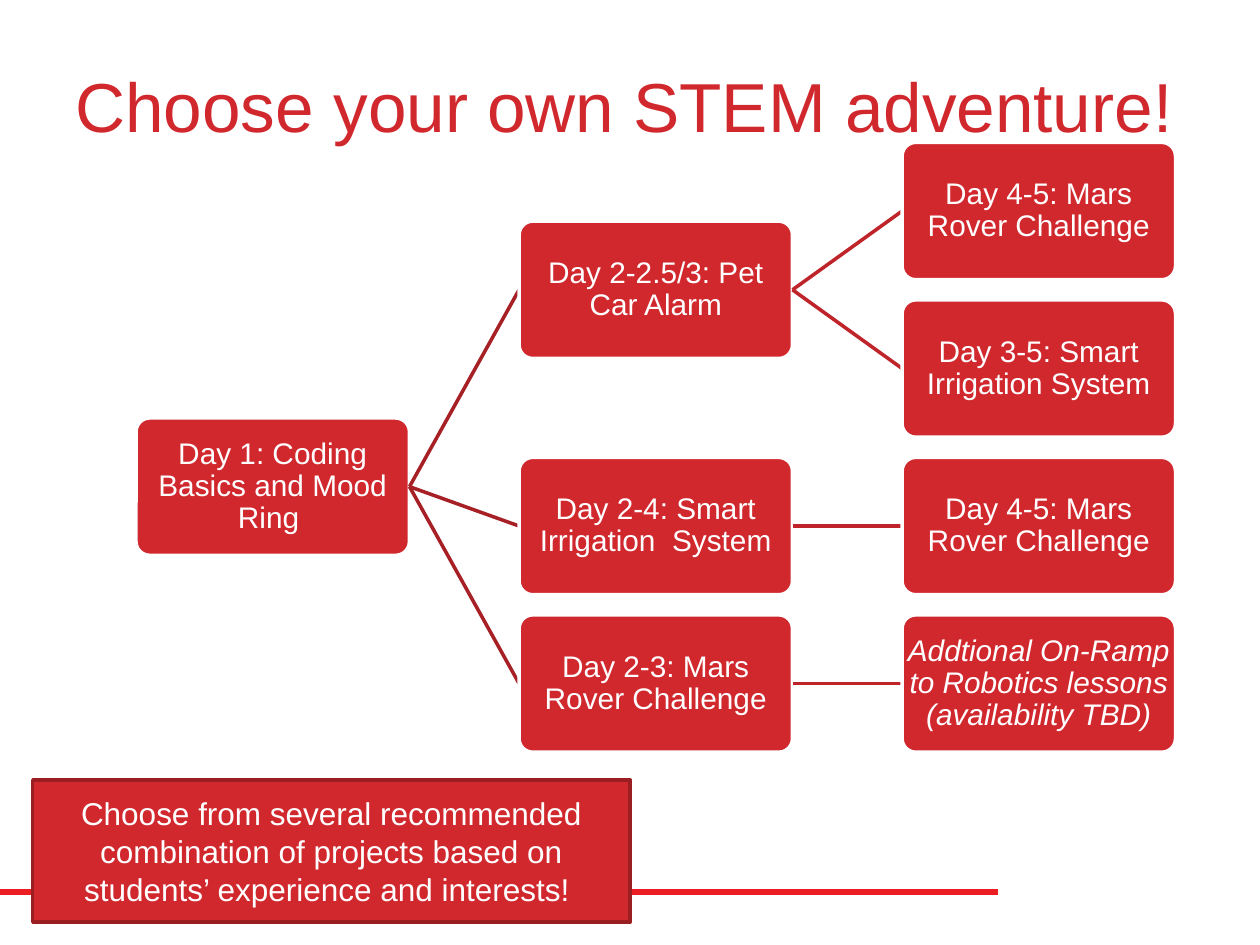
import pptx
import pptx.dml.color
import pptx.enum.shapes
import pptx.enum.text
import pptx.oxml.ns
import pptx.util
from lxml import etree

Inches = pptx.util.Inches
Pt = pptx.util.Pt
SHAPE = pptx.enum.shapes.MSO_SHAPE
ALIGN = pptx.enum.text.PP_ALIGN

TITLE = "Choose your own STEM adventure!"
ADVICE = (
    "Choose from several recommended combination of projects "
    "based on students’ experience and interests! "
)
PLAN = ("Day 1: Coding Basics and Mood Ring ", [
    ("Day 2-2.5/3: Pet Car Alarm", [
        ("Day 4-5: Mars Rover Challenge", []),
        ("Day 3-5: Smart Irrigation System", []),
    ]),
    ("Day 2-4: Smart Irrigation  System", [
        ("Day 4-5: Mars Rover Challenge", []),
    ]),
    ("Day 2-3: Mars Rover Challenge", [
        ("Addtional On-Ramp to Robotics lessons (availability TBD)", []),
    ]),
])
ITALIC_PREFIX = "Addtional"

THEME = {
    "font": "Arial",
    "red": "D1282E",
    "white": "FFFFFF",
    "rule": "ED1D24",
    "advice_border": "9B1E22",
    "branches": ["A72025", "BE242A"],
    "title_size": 39.6,
    "node_size": 17,
    "advice_size": 18,
}

NODE_LEFT, NODE_TOP = 1.08, 1.13
NODE_WIDTH, NODE_HEIGHT = 2.17, 1.09
COLUMN_STEP, ROW_STEP = 3.04, 1.25


def color(value):
    return pptx.dml.color.RGBColor.from_string(value)


def apply(target, formats):
    for name, value in formats.items():
        setattr(target, name, value)


def write(shape, text, size, text_color, alignment, inset=None, spacing=None, italic=None):
    frame = shape.text_frame
    apply(frame, {"word_wrap": True, "vertical_anchor": pptx.enum.text.MSO_ANCHOR.MIDDLE})
    if inset is not None:
        margins = ("margin_left", "margin_top", "margin_right", "margin_bottom")
        apply(frame, dict.fromkeys(margins, Inches(inset)))
    paragraph = frame.paragraphs[0]
    apply(paragraph, {"alignment": alignment, "line_spacing": spacing})
    run = paragraph.add_run()
    run.text = text
    apply(run.font, {"name": THEME["font"], "size": Pt(size), "italic": italic})
    run.font.color.rgb = color(text_color)


def add_box(slide, kind, bounds, border):
    shape = slide.shapes.add_shape(kind, *map(Inches, bounds))
    shape.shadow.inherit = False
    shape.fill.solid()
    shape.fill.fore_color.rgb = color(THEME["red"])
    shape.line.color.rgb = color(border)
    shape.line.width = Pt(2)
    return shape


def add_line(slide, points, line_color, width):
    connector = slide.shapes.add_connector(
        pptx.enum.shapes.MSO_CONNECTOR.STRAIGHT, *map(Inches, points)
    )
    connector.line.color.rgb = color(line_color)
    connector.line.width = Pt(width)
    etree.SubElement(connector.element.spPr, pptx.oxml.ns.qn("a:effectLst"))
    return connector


def count_leaves(node):
    return sum(map(count_leaves, node[1])) or 1


def find_row(node, first_row):
    children = node[1]
    if not children:
        return first_row
    last_row = first_row + count_leaves(node) - count_leaves(children[-1])
    return (find_row(children[0], first_row) + find_row(children[-1], last_row)) / 2


def add_node(slide, node, column=0, first_row=0, parent=None):
    text, children = node
    left = NODE_LEFT + column * COLUMN_STEP
    top = NODE_TOP + find_row(node, first_row) * ROW_STEP
    shape = add_box(
        slide, SHAPE.ROUNDED_RECTANGLE, (left, top, NODE_WIDTH, NODE_HEIGHT), THEME["white"]
    )
    shape.adjustments[0] = 0.1
    italic = True if text.startswith(ITALIC_PREFIX) else None
    write(shape, text, THEME["node_size"], THEME["white"], ALIGN.CENTER, 0.01, 0.9, italic)
    if parent is not None:
        connector = add_line(slide, (0, 0, 0, 0), THEME["branches"][column - 1], 2)
        connector.begin_connect(parent, 3)
        connector.end_connect(shape, 1)
        slide.shapes.element.append(shape.element)
    for child in children:
        add_node(slide, child, column + 1, first_row, shape)
        first_row += count_leaves(child)


def main():
    presentation = pptx.Presentation()
    apply(presentation, {"slide_width": Inches(10), "slide_height": Inches(7.5)})
    slide = presentation.slides.add_slide(presentation.slide_layouts[6])

    add_line(slide, (0, 7.08, 7.92, 7.08), THEME["rule"], 3)
    title = slide.shapes.add_textbox(*map(Inches, (0.5, 0.21, 9, 1.25)))
    write(title, TITLE, THEME["title_size"], THEME["red"], ALIGN.LEFT)
    add_node(slide, PLAN)
    advice = add_box(slide, SHAPE.RECTANGLE, (0.26, 6.19, 4.74, 1.13), THEME["advice_border"])
    write(advice, ADVICE, THEME["advice_size"], THEME["white"], ALIGN.CENTER)

    presentation.save("out.pptx")


if __name__ == "__main__":
    main()
